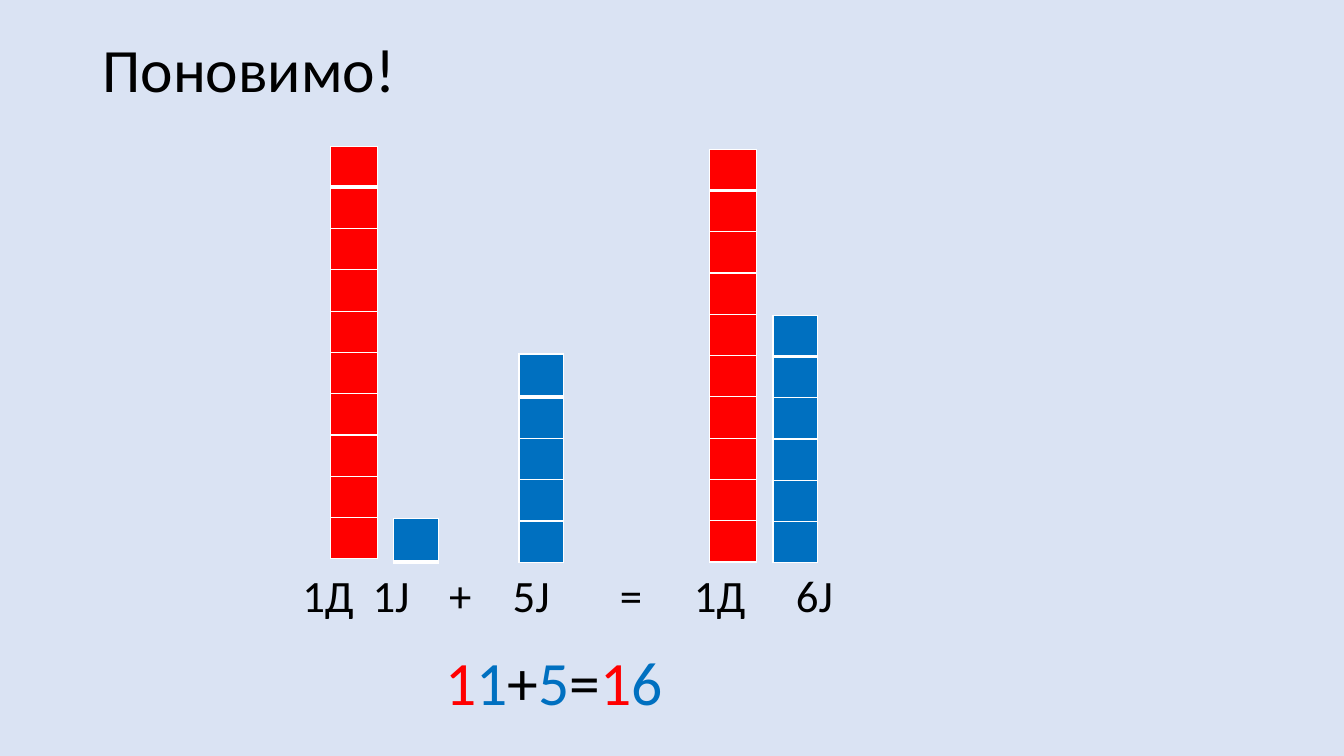
from dataclasses import dataclass

from lxml import etree
from pptx import Presentation
from pptx.dml.color import RGBColor
from pptx.enum import text as t
from pptx.oxml import ns
from pptx.util import Cm, Pt


@dataclass(frozen=True)
class Theme:
    background: str = "DAE3F3"
    ink: str = "000000"
    tens: str = "FF0000"
    ones: str = "0070C0"
    border: str = "FFFFFF"
    font: str = "Calibri"
    large: int = 44
    label: int = 32
    thin: int = 1
    thick: int = 3


THEME = Theme()
UNIT_HEIGHT = 1.04


def add_text(slide, content, left, top, width, height, *, size, colors=None,
             stops=(), anchor=t.MSO_ANCHOR.TOP, line_spacing=None):
    """Colors, if given, go one to a character; stops are tab stops in cm."""
    box = slide.shapes.add_textbox(Cm(left), Cm(top), Cm(width), Cm(height))
    frame = box.text_frame
    frame.word_wrap = True
    frame.vertical_anchor = anchor
    paragraph = frame.paragraphs[0]
    if line_spacing:
        paragraph.line_spacing = line_spacing
    if stops:
        tabs = etree.SubElement(paragraph._p.get_or_add_pPr(), ns.qn("a:tabLst"))
        for stop in stops:
            etree.SubElement(tabs, ns.qn("a:tab"), pos=str(Cm(stop)), algn="l")
    pieces = zip(content, colors) if colors else [(content, THEME.ink)]
    for piece, color in pieces:
        run = paragraph.add_run()
        run.text = piece
        run.font.name = THEME.font
        run.font.size = Pt(size)
        run.font.color.rgb = RGBColor.from_string(color)


def add_border(cell, side, points):
    line = etree.SubElement(cell._tc.get_or_add_tcPr(), ns.qn(f"a:ln{side}"),
                            w=str(Pt(points)))
    fill = etree.SubElement(line, ns.qn("a:solidFill"))
    etree.SubElement(fill, ns.qn("a:srgbClr"), val=THEME.border)


def add_tower(slide, left, top, width, count, color, top_height):
    """Stack of counting cubes with a heavy line under the top cube."""
    heights = [top_height] + [UNIT_HEIGHT] * (count - 1)
    tower = slide.shapes.add_table(count, 1, Cm(left), Cm(top), Cm(width),
                                   Cm(sum(heights))).table
    tower.first_row = tower.horz_banding = False
    for index, height in enumerate(heights):
        tower.rows[index].height = Cm(height)
        cube = tower.cell(index, 0)
        cube.margin_top = cube.margin_bottom = 0
        thick_sides = {0: "B", 1: "T"}.get(index, "")
        for side in "LRTB":
            add_border(cube, side, THEME.thick if side == thick_sides else THEME.thin)
        cube.fill.solid()
        cube.fill.fore_color.rgb = RGBColor.from_string(color)


def main():
    deck = Presentation()
    deck.slide_width, deck.slide_height = Cm(33.87), Cm(19.05)
    slide = deck.slides.add_slide(deck.slide_layouts[6])
    slide.background.fill.solid()
    slide.background.fill.fore_color.rgb = RGBColor.from_string(THEME.background)

    add_text(slide, "Поновимо!", 2.33, 0, 29.21, 3.68, size=THEME.large,
             anchor=t.MSO_ANCHOR.MIDDLE, line_spacing=0.9)

    tens, ones = THEME.tens, THEME.ones
    for left, top, width, count, color, top_height in (
        (8.33, 3.69, 1.19, 10, tens, 1.03),
        (9.91, 13.07, 1.14, 1, ones, 1.09),
        (13.08, 8.92, 1.12, 5, ones, 1.09),
        (17.88, 3.77, 1.19, 10, tens, 1.03),
        (19.48, 7.95, 1.12, 6, ones, 1.03),
    ):
        add_tower(slide, left, top, width, count, color, top_height)

    add_text(slide, "\t1Д\t1Ј\t+\t5Ј\t=\t1Д\t6Ј", 3.3, 14.17, 28.24, 1.62,
             size=THEME.label,
             stops=(4.07, 5.84, 7.77, 9.37, 12.07, 13.94, 16.51))
    add_text(slide, "11+5=16", 10.97, 16.1, 6.45, 2.13, size=THEME.large,
             colors=(tens, ones, THEME.ink, ones, THEME.ink, tens, ones))

    deck.save("out.pptx")


if __name__ == "__main__":
    main()
